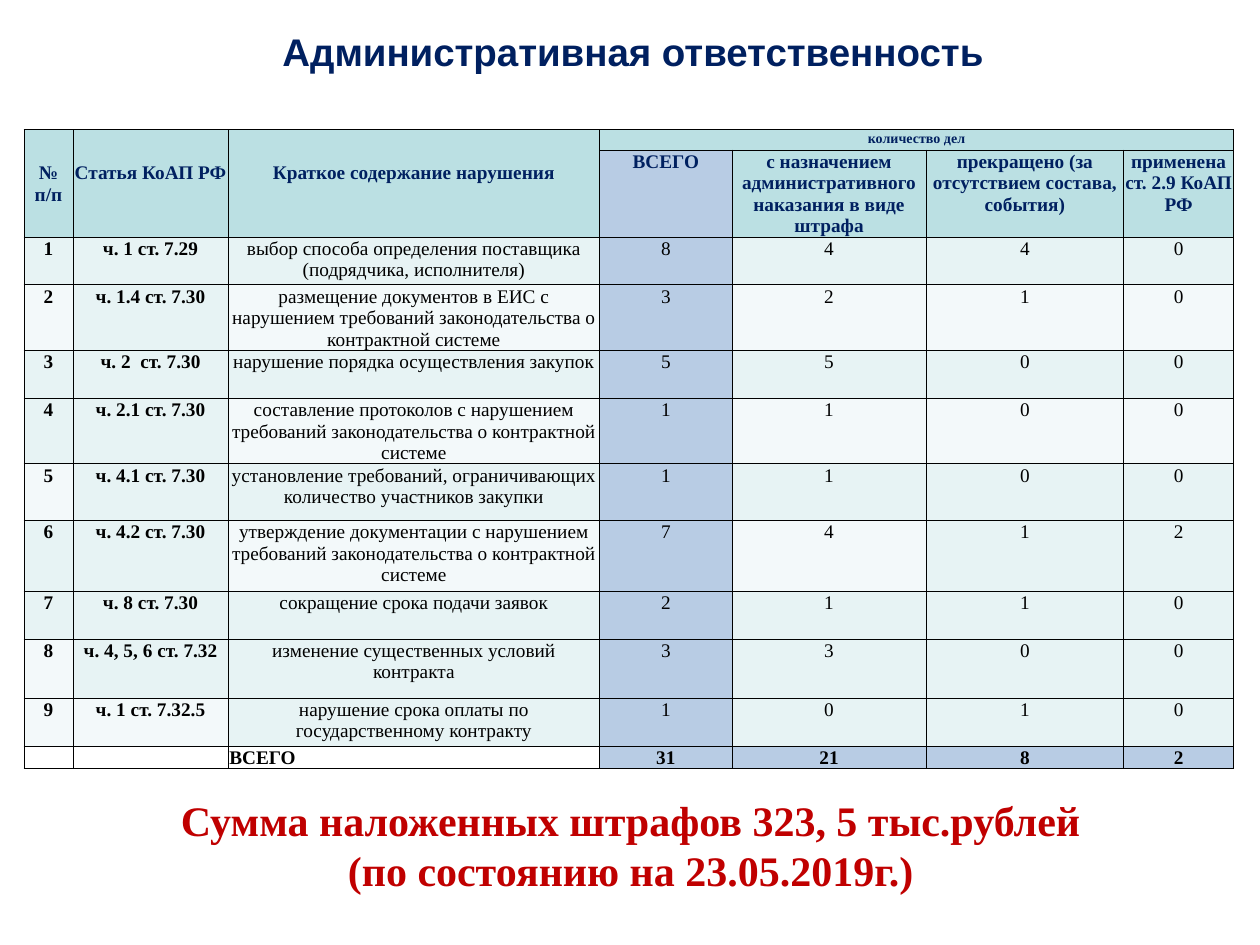
"""Build the slide on administrative liability cases in public procurement."""
import dataclasses
import typing

import pptx
import pptx.dml.color
import pptx.enum.text
import pptx.oxml
import pptx.oxml.ns
import pptx.util
from pptx.util import Inches

Align = pptx.enum.text.PP_ALIGN
Anchor = pptx.enum.text.MSO_ANCHOR


@dataclasses.dataclass(frozen=True)
class Theme:
    navy: str = "002060"
    red: str = "C00000"
    black: str = "000000"
    header: str = "BBE0E3"
    total: str = "B8CCE4"
    light: str = "E7F3F4"
    pale: str = "F3F9FA"
    heading_font: str = "Arial"
    body_font: str = "Times New Roman"
    heading_size: float = 22
    summary_size: float = 24
    table_size: float = 11
    small_size: float = 8
    border_width: float = 0.5


THEME = Theme()
TINTS = {"L": THEME.light, "P": THEME.pale, "T": THEME.total}


@dataclasses.dataclass(frozen=True)
class Violation:
    article: str
    summary: str
    counts: tuple[int, int, int, int]
    tints: str = "LLLTLLL"


@dataclasses.dataclass(frozen=True)
class CellStyle:
    fill: str | None = None
    color: str = THEME.black
    size: float = THEME.table_size
    bold: bool = False
    align: Align = Align.CENTER
    anchor: Anchor = Anchor.TOP
    bottom: float = 0


VIOLATIONS = [
    Violation("ч. 1 ст. 7.29", "выбор способа определения поставщика (подрядчика, исполнителя)", (8, 4, 4, 0)),
    Violation("ч. 1.4 ст. 7.30",
              "размещение документов в ЕИС с нарушением требований законодательства о контрактной системе",
              (3, 2, 1, 0), "PLPTPPP"),
    Violation("ч. 2  ст. 7.30", "нарушение порядка осуществления закупок", (5, 5, 0, 0)),
    Violation("ч. 2.1 ст. 7.30",
              "составление протоколов с нарушением требований законодательства о контрактной системе",
              (1, 1, 0, 0), "LLPTPPP"),
    Violation("ч. 4.1 ст. 7.30", "установление требований, ограничивающих количество участников закупки",
              (1, 1, 0, 0), "PLLTLLL"),
    Violation("ч. 4.2 ст. 7.30",
              "утверждение документации с нарушением требований законодательства о контрактной системе",
              (7, 4, 1, 2), "LLPTPLL"),
    Violation("ч. 8 ст. 7.30", "сокращение срока подачи заявок", (2, 1, 1, 0)),
    Violation("ч. 4, 5, 6 ст. 7.32", "изменение существенных условий контракта", (3, 3, 0, 0), "PLLTLLL"),
    Violation("ч. 1 ст. 7.32.5", "нарушение срока оплаты по государственному контракту",
              (1, 0, 1, 0), "PPLTLLL"),
]
COLUMN_WIDTHS = [0.39, 1.23, 2.95, 1.05, 1.54, 1.57, 0.87]
ROW_HEIGHTS = [0.16, 0.68, 0.38, 0.51, 0.38, 0.51, 0.45, 0.56, 0.38, 0.47, 0.38, 0.17]
ROW_TITLES = ["№ п/п", "Статья КоАП РФ", "Краткое содержание нарушения"]
COUNT_TITLES = ["ВСЕГО", "с назначением административного наказания в виде штрафа",
                "прекращено (за отсутствием состава, события)", "применена ст. 2.9 КоАП РФ"]


def apply_format(target: typing.Any, values: dict[str, typing.Any]) -> None:
    for attribute, value in values.items():
        setattr(target, attribute, value)


def write_paragraph(paragraph: typing.Any, text: str, face: str, size: float, color: str,
                    bold: bool, align: Align = Align.CENTER) -> None:
    paragraph.alignment = align
    words = paragraph.add_run()
    words.text = text
    apply_format(words.font, {"name": face, "size": pptx.util.Pt(size), "bold": bold})
    words.font.color.rgb = pptx.dml.color.RGBColor.from_string(color)


def add_borders(cell: typing.Any) -> None:
    properties = cell._tc.get_or_add_tcPr()
    for side in ("lnL", "lnR", "lnT", "lnB"):
        properties.append(pptx.oxml.parse_xml(
            f'<a:{side} {pptx.oxml.ns.nsdecls("a")} w="{pptx.util.Pt(THEME.border_width)}">'
            f'<a:solidFill><a:srgbClr val="{THEME.black}"/></a:solidFill></a:{side}>'))


def draw_cell(cell: typing.Any, text: str, style: CellStyle) -> None:
    add_borders(cell)
    apply_format(cell, {"margin_left": Inches(0.01), "margin_right": Inches(0.01),
                        "margin_top": Inches(0.01), "margin_bottom": Inches(style.bottom),
                        "vertical_anchor": style.anchor})
    if style.fill:
        cell.fill.solid()
        cell.fill.fore_color.rgb = pptx.dml.color.RGBColor.from_string(style.fill)
    else:
        cell.fill.background()
    paragraph = cell.text_frame.paragraphs[0]
    if text:
        write_paragraph(paragraph, text, THEME.body_font, style.size, style.color, style.bold, style.align)
    else:
        paragraph._p.get_or_add_endParaRPr().set("sz", str(int(THEME.small_size * 100)))


def draw_header(table: typing.Any) -> None:
    heading = CellStyle(THEME.header, THEME.navy, bold=True)
    for column, title in enumerate(ROW_TITLES):
        table.cell(0, column).merge(table.cell(1, column))
        bottom = 0.18 if column else 0
        draw_cell(table.cell(0, column), title,
                  dataclasses.replace(heading, anchor=Anchor.MIDDLE, bottom=bottom))
        draw_cell(table.cell(1, column), "", heading)
    first = len(ROW_TITLES)
    table.cell(0, first).merge(table.cell(0, len(COLUMN_WIDTHS) - 1))
    for column, title in enumerate(COUNT_TITLES, first):
        group = "количество дел" if column == first else ""
        draw_cell(table.cell(0, column), group, dataclasses.replace(heading, size=THEME.small_size))
        fill = THEME.total if column == first else THEME.header
        draw_cell(table.cell(1, column), title, dataclasses.replace(heading, fill=fill))


def draw_violation(table: typing.Any, number: int, violation: Violation) -> None:
    entries = [number, violation.article, violation.summary, *violation.counts]
    for column, (entry, tint) in enumerate(zip(entries, violation.tints)):
        draw_cell(table.cell(number + 1, column), str(entry), CellStyle(TINTS[tint], bold=column < 2))


def draw_totals(table: typing.Any) -> None:
    sums = [str(sum(counts)) for counts in zip(*(violation.counts for violation in VIOLATIONS))]
    for column, entry in enumerate(["", "", "ВСЕГО", *sums]):
        is_count = column >= len(ROW_TITLES)
        draw_cell(table.cell(len(ROW_HEIGHTS) - 1, column), entry,
                  CellStyle(THEME.total if is_count else None, bold=True, anchor=Anchor.BOTTOM,
                            align=Align.CENTER if is_count else Align.LEFT))


def draw_table(slide: typing.Any) -> None:
    table = slide.shapes.add_table(len(ROW_HEIGHTS), len(COLUMN_WIDTHS), Inches(0.19), Inches(1.03),
                                   Inches(sum(COLUMN_WIDTHS)), Inches(sum(ROW_HEIGHTS))).table
    apply_format(table, {"first_row": False, "horz_banding": False})
    for column, width in zip(table.columns, COLUMN_WIDTHS):
        column.width = Inches(width)
    for row, height in zip(table.rows, ROW_HEIGHTS):
        row.height = Inches(height)
    draw_header(table)
    for number, violation in enumerate(VIOLATIONS, 1):
        draw_violation(table, number, violation)
    draw_totals(table)


def draw_heading(slide: typing.Any) -> None:
    heading = slide.shapes.title
    apply_format(heading, {"left": Inches(0.26), "top": Inches(0), "width": Inches(9.53),
                           "height": Inches(0.81)})
    heading.text_frame.vertical_anchor = Anchor.MIDDLE
    write_paragraph(heading.text_frame.paragraphs[0], "Административная ответственность",
                    THEME.heading_font, THEME.heading_size, THEME.navy, True)


def draw_summary(slide: typing.Any) -> None:
    summary = slide.shapes.add_textbox(Inches(0.22), Inches(6.25), Inches(9.57), Inches(0.91)).text_frame
    apply_format(summary, {"word_wrap": True, "vertical_anchor": Anchor.MIDDLE,
                           "auto_size": pptx.enum.text.MSO_AUTO_SIZE.SHAPE_TO_FIT_TEXT})
    fines = summary.paragraphs[0]
    for paragraph, text in ((fines, "Сумма наложенных штрафов 323, 5 тыс.рублей"),
                            (summary.add_paragraph(), "(по состоянию на 23.05.2019г.)")):
        write_paragraph(paragraph, text, THEME.body_font, THEME.summary_size, THEME.red, True)


def main() -> None:
    presentation = pptx.Presentation()
    apply_format(presentation, {"slide_width": Inches(10), "slide_height": Inches(7.5)})
    slide = presentation.slides.add_slide(presentation.slide_layouts[5])
    draw_heading(slide)
    draw_table(slide)
    draw_summary(slide)
    presentation.save("out.pptx")


if __name__ == "__main__":
    main()
